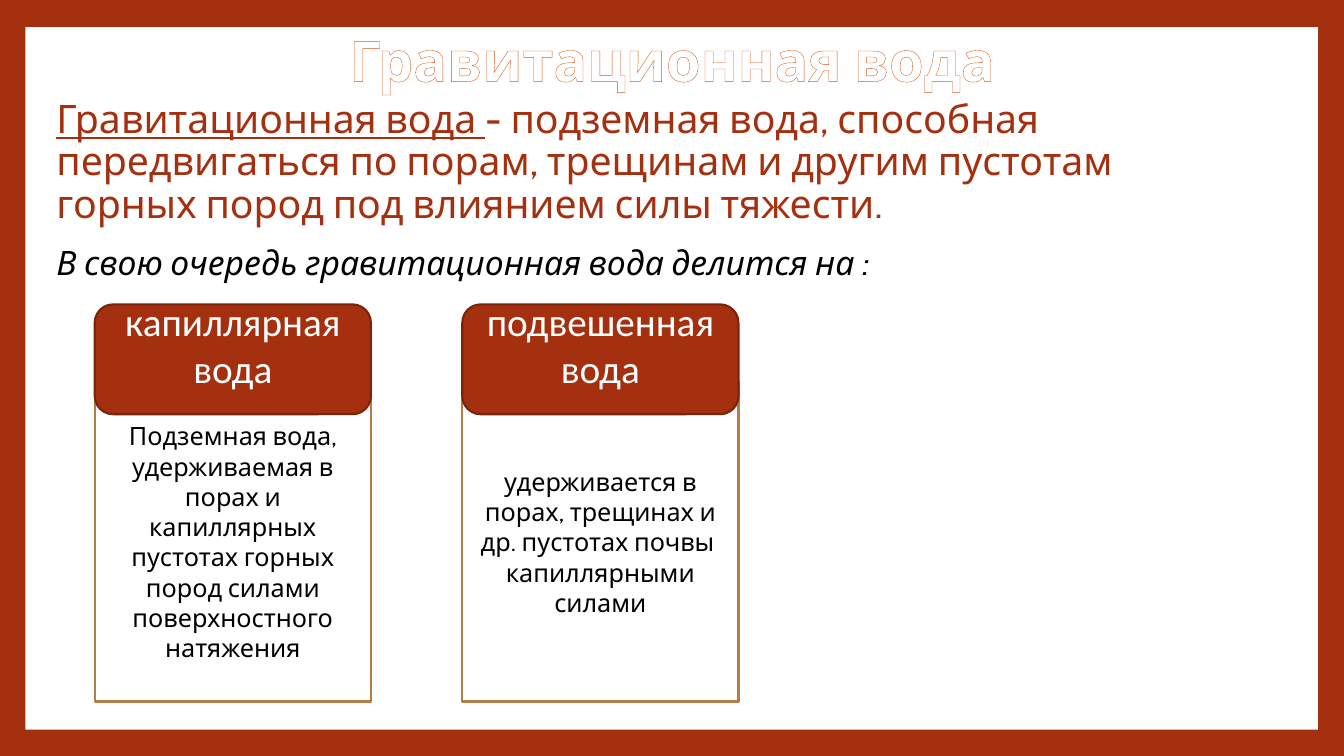
from lxml.etree import SubElement
from pptx import Presentation
from pptx.dml.color import RGBColor
from pptx.enum.shapes import MSO_SHAPE
from pptx.enum.text import MSO_ANCHOR, PP_ALIGN
from pptx.oxml.ns import qn
from pptx.util import Inches, Pt

HUES = {"rust": "A5300F", "dark": "7A240B", "tan": "B27D49",
        "glow": "D55816", "white": "FFFFFF", "black": "000000"}


def tint(name):
    return RGBColor.from_string(HUES[name])


class Deck:
    """Holds the style and the current slide; lengths are percent of its size."""
    font = "Cabin"

    def __init__(self):
        self.prs = Presentation()
        self.prs.slide_width = Inches(13.33)
        self.prs.slide_height = Inches(7.5)
        self.page = self.prs.slides.add_slide(self.prs.slide_layouts[6])
        back = self.page.background.fill
        back.solid()
        back.fore_color.rgb = tint("rust")

    def place(self, area):
        wide, high = self.prs.slide_width, self.prs.slide_height
        return [round(share * full / 100)
                for share, full in zip(area, (wide, high, wide, high))]

    def shape(self, area, fill, line=None, kind=MSO_SHAPE.RECTANGLE):
        item = self.page.shapes.add_shape(kind, *self.place(area))
        item.shadow.inherit = False
        item.fill.solid()
        item.fill.fore_color.rgb = tint(fill)
        if line:
            item.line.color.rgb = tint(line)
            item.line.width = Pt(1.5)
        else:
            item.line.fill.background()
        return self.frame(item, MSO_ANCHOR.MIDDLE)

    def text(self, area, anchor):
        return self.frame(self.page.shapes.add_textbox(*self.place(area)), anchor)

    def frame(self, item, anchor):
        box = item.text_frame
        box.word_wrap = True
        box.vertical_anchor = anchor
        return box

    def para(self, box, align=PP_ALIGN.CENTER, space=None, before=None, first=True):
        para = box.paragraphs[0] if first else box.add_paragraph()
        para.alignment = align
        para.line_spacing = space
        para.space_before = before
        return para

    def run(self, para, words, size, hue, font=None, **marks):
        run = para.add_run()
        run.text = words
        run.font.size = Pt(size)
        run.font.name = font or self.font
        run.font.color.rgb = tint(hue)
        for mark, state in marks.items():
            setattr(run.font, mark, state)
        return run

    def edge(self, run, hue, width):
        """Outline the letters of a run."""
        props = run.font._element
        line = SubElement(props, qn("a:ln"), w=str(Pt(width)))
        fill = SubElement(line, qn("a:solidFill"))
        SubElement(fill, qn("a:srgbClr"), val=HUES[hue])
        props.insert(0, line)

    def card(self, left, head, body):
        box = self.shape((left, 50.53, 20.55, 42.27), "white", "tan")
        self.run(self.para(box), body, 18, "black")
        top = self.shape((left, 40.27, 20.55, 14.53), "rust", "dark",
                         MSO_SHAPE.ROUNDED_RECTANGLE)
        top.margin_bottom = Inches(0.35)
        self.run(self.para(top), head, 28, "white", "Calibri")


CARDS = [
    ("капиллярная вода", "Подземная вода, удерживаемая в порах и капиллярных "
     "пустотах горных пород силами поверхностного натяжения"),
    ("подвешенная вода", "удерживается в порах, трещинах и др. пустотах почвы  "
     "капиллярными силами"),
]


def main():
    deck = Deck()
    deck.shape((1.88, 3.6, 96.17, 92.93), "white")

    title = deck.text((0, -1.47, 100, 19.73), MSO_ANCHOR.MIDDLE)
    name = deck.run(deck.para(title, space=0.9), "Гравитационная вода",
                    40, "white", bold=True)
    deck.edge(name, "glow", 0.52)

    body = deck.text((3.08, 12.53, 83.2, 64.13), MSO_ANCHOR.TOP)
    body.margin_left = Inches(0.15)
    style = {"align": PP_ALIGN.LEFT, "space": 0.9, "before": Pt(14)}
    para = deck.para(body, **style)
    deck.run(para, "Гравитационная вода ", 28, "rust", underline=True)
    deck.run(para, "- подземная вода, способная передвигаться по порам, трещинам "
             "и другим пустотам горных пород под влиянием силы тяжести.", 28, "rust")
    para = deck.para(body, first=False, **style)
    deck.run(para, "В свою очередь гравитационная вода делится на :",
             24, "black", italic=True)

    for spot, (head, text) in enumerate(CARDS):
        deck.card(7.05 + 27.35 * spot, head, text)
    deck.prs.save("out.pptx")


if __name__ == "__main__":
    main()
